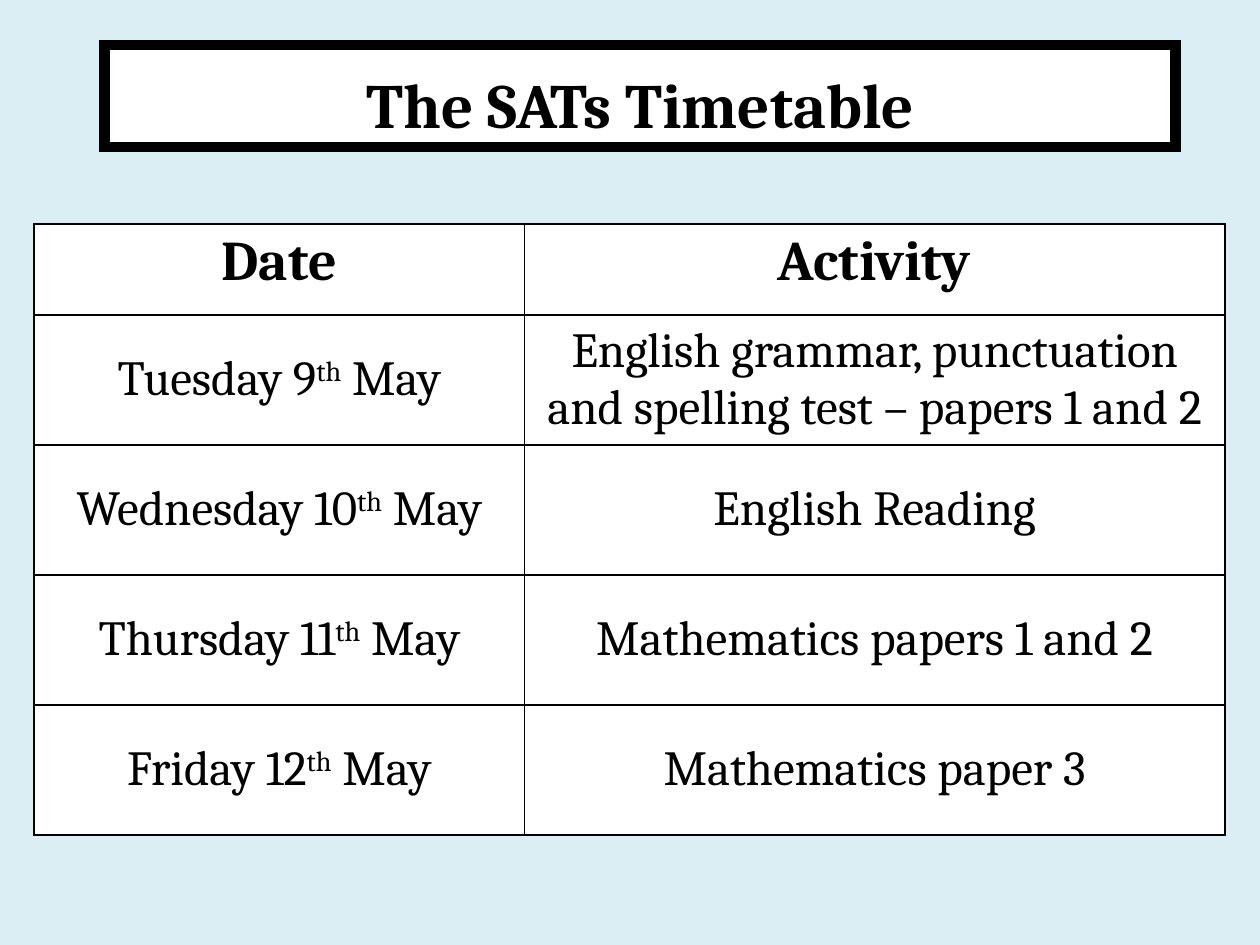
import dataclasses

import pptx
import pptx.dml.color
import pptx.enum.shapes
import pptx.enum.text
import pptx.oxml
import pptx.oxml.ns
import pptx.util

Cm = pptx.util.Cm
Pt = pptx.util.Pt
ANCHOR = pptx.enum.text.MSO_ANCHOR


@dataclasses.dataclass(frozen=True)
class Theme:
    background: str = "DBEEF4"
    panel: str = "FFFFFF"
    ink: str = "000000"
    font: str = "Cambria"
    title_size: int = 36
    header_size: int = 32
    body_size: int = 28
    frame_width: int = 6
    border_width: int = 1


class TimetablePage:
    def __init__(self, deck, theme):
        self.theme = theme
        self.page = deck.slides.add_slide(deck.slide_layouts[6])
        self.paint(self.page.background.fill, theme.background)

    def paint(self, fill, colour):
        fill.solid()
        fill.fore_color.rgb = pptx.dml.color.RGBColor.from_string(colour)

    def set_text(self, para, text, size, bold=False):
        """Set centred text; every second part between ^ marks is raised."""
        parts = text.split("^")
        para.text = parts[0]
        for part in parts[1:]:
            para.add_run().text = part
        para.alignment = pptx.enum.text.PP_ALIGN.CENTER
        for index, span in enumerate(para.runs):
            span.font.name = self.theme.font
            span.font.size = Pt(size)
            span.font.bold = bold
            self.paint(span.font.fill, self.theme.ink)
            if index % 2:
                span._r.get_or_add_rPr().set("baseline", "30000")

    def title(self, text, left, top, width, height):
        box = self.page.shapes.add_shape(
            pptx.enum.shapes.MSO_SHAPE.RECTANGLE, left, top, width, height)
        box.shadow.inherit = False
        self.paint(box.fill, self.theme.panel)
        self.paint(box.line.fill, self.theme.ink)
        box.line.width = Pt(self.theme.frame_width)
        # Square corners on the thick frame
        outline = box._element.spPr.find(pptx.oxml.ns.qn("a:ln"))
        outline.append(pptx.oxml.parse_xml(
            f'<a:miter {pptx.oxml.ns.nsdecls("a")} lim="800000"/>'))
        box.text_frame.word_wrap = True
        box.text_frame.vertical_anchor = ANCHOR.BOTTOM
        self.set_text(box.text_frame.paragraphs[0], text, self.theme.title_size, True)

    def border(self, cell):
        properties = cell._tc.get_or_add_tcPr()
        for side in "LRTB":
            properties.append(pptx.oxml.parse_xml(
                f'<a:ln{side} {pptx.oxml.ns.nsdecls("a")} '
                f'w="{Pt(self.theme.border_width)}"><a:solidFill>'
                f'<a:srgbClr val="{self.theme.ink}"/></a:solidFill></a:ln{side}>'))

    def table(self, rows, left, top, widths, heights):
        table = self.page.shapes.add_table(
            len(rows), len(widths), left, top, sum(widths), sum(heights)).table
        for column, width in zip(table.columns, widths):
            column.width = width
        for row_index, (row, height) in enumerate(zip(rows, heights)):
            table.rows[row_index].height = height
            header = row_index == 0
            size = self.theme.header_size if header else self.theme.body_size
            for column_index, text in enumerate(row):
                cell = table.cell(row_index, column_index)
                self.border(cell)
                self.paint(cell.fill, self.theme.panel)
                cell.vertical_anchor = ANCHOR.TOP if header else ANCHOR.MIDDLE
                self.set_text(cell.text_frame.paragraphs[0], text, size, header)


def main():
    deck = pptx.Presentation()
    deck.slide_width, deck.slide_height = Cm(25.4), Cm(19.05)
    timetable = TimetablePage(deck, Theme())

    # Framed title
    timetable.title("The SATs Timetable", Cm(2.11), Cm(0.91), Cm(21.59), Cm(2.06))

    # Dates and tests
    rows = [
        ("Date", "Activity"),
        ("Tuesday 9^th^ May",
         "English grammar, punctuation and spelling test – papers 1 and 2"),
        ("Wednesday 10^th^ May", "English Reading"),
        ("Thursday 11^th^ May", "Mathematics papers 1 and 2"),
        ("Friday 12^th^ May", "Mathematics paper 3"),
    ]
    heights = [Cm(1.83)] + [Cm(2.62)] * (len(rows) - 1)
    timetable.table(rows, Cm(0.69), Cm(4.52), [Cm(9.88), Cm(14.12)], heights)

    deck.save("out.pptx")


if __name__ == "__main__":
    main()
